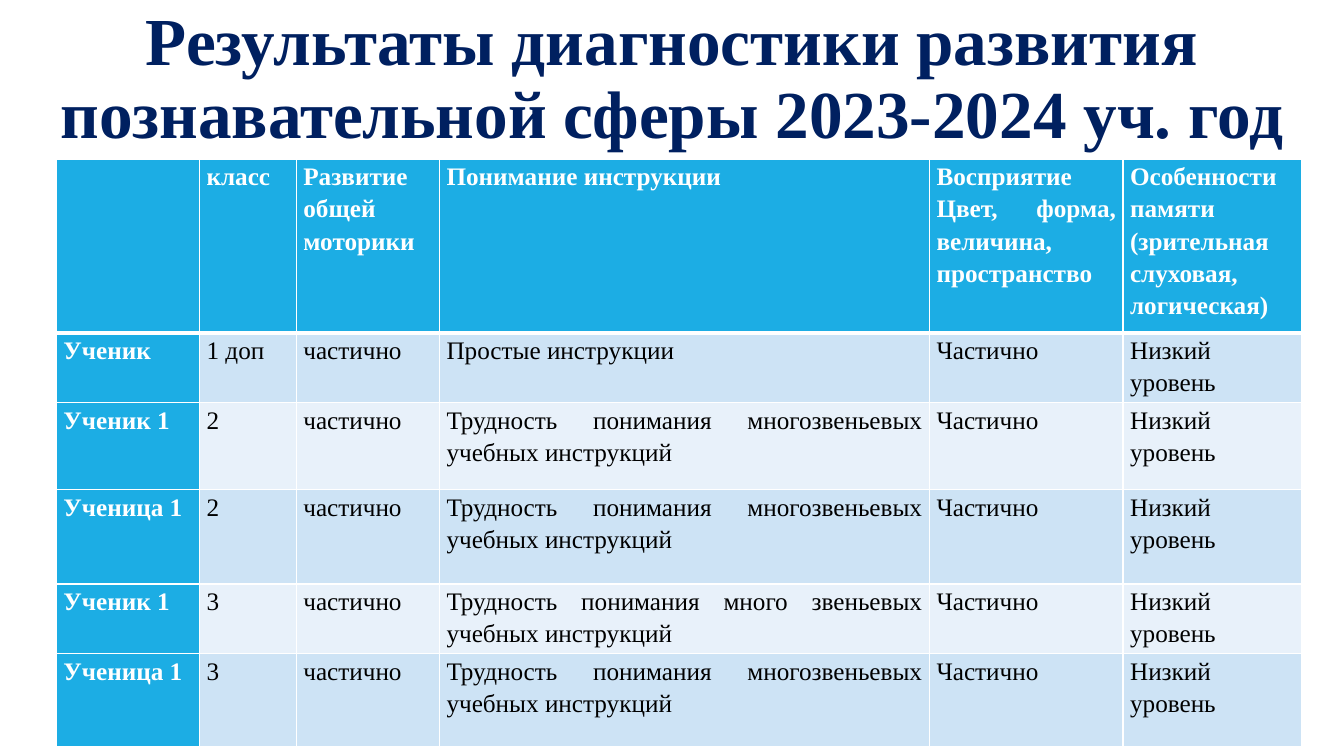
from lxml import etree
from pptx import Presentation
from pptx.dml.color import RGBColor
from pptx.enum.text import MSO_ANCHOR, PP_ALIGN
from pptx.oxml.ns import qn
from pptx.util import Inches, Pt

CENTER, JUSTIFY = PP_ALIGN.CENTER, PP_ALIGN.JUSTIFY
MIDDLE = MSO_ANCHOR.MIDDLE
FONT = "Times New Roman"
NAVY, BLUE, WHITE, BLACK = "002060", "1CADE4", "FFFFFF", "000000"
BANDS = ["CDE3F5", "E8F1FA"]

TITLE = "Результаты диагностики развития познавательной сферы 2023-2024 уч. год"
HEADER = [
    "", "класс", "Развитие общей моторики", "Понимание инструкции",
    "Восприятие\nЦвет, форма, величина, пространство",
    "Особенности памяти (зрительная слуховая, логическая)",
]
COMPLEX = "Трудность понимания многозвеньевых учебных инструкций"
PUPILS = [
    ("Ученик", "1 доп", "Простые инструкции"),
    ("Ученик 1", "2", COMPLEX),
    ("Ученица 1", "2", COMPLEX),
    ("Ученик 1", "3", "Трудность понимания много звеньевых учебных инструкций"),
    ("Ученица 1", "3", COMPLEX),
]
COL_WIDTHS = [1.42, 0.96, 1.42, 4.86, 1.92, 1.77]
ROW_HEIGHTS = [1.04, 0.33, 0.86, 0.94, 0.69, 0.92]


def rgb(color):
    """Turn a hex string into a colour."""
    return RGBColor.from_string(color)


def format_text(tf, size, color, bold, align, spacing):
    """Apply one style to every paragraph and run of a text frame."""
    for p in tf.paragraphs:
        p.alignment = align
        p.line_spacing = spacing
        for r in p.runs:
            r.font.name = FONT
            r.font.size = Pt(size)
            r.font.bold = bold
            r.font.color.rgb = rgb(color)


def add_border(cell, side, width):
    """Draw a white line on one side of a cell."""
    ln = etree.SubElement(cell._tc.get_or_add_tcPr(), qn("a:ln" + side), w=str(Pt(width)))
    fill = etree.SubElement(ln, qn("a:solidFill"))
    etree.SubElement(fill, qn("a:srgbClr"), val=WHITE)


def add_title(s, left, top, width, height):
    """Place the centred slide title."""
    tf = s.shapes.add_textbox(*map(Inches, (left, top, width, height))).text_frame
    tf.word_wrap = True
    tf.vertical_anchor = MIDDLE
    tf.text = TITLE
    format_text(tf, 48, NAVY, True, CENTER, 0.9)


def fill_cell(cell, text, row, col):
    """Write and style a cell according to its row and column."""
    heading = row == 0 or col == 0
    cell.margin_left = cell.margin_right = Inches(0.07)
    cell.margin_top = cell.margin_bottom = 0
    cell.text_frame.text = text
    format_text(cell.text_frame, 18, WHITE if heading else BLACK, heading, JUSTIFY, 1.15)
    for side in "LRTB":
        under_header = (row, side) in ((0, "B"), (1, "T"))
        add_border(cell, side, 3 if under_header else 1)
    cell.fill.solid()
    cell.fill.fore_color.rgb = rgb(BLUE if heading else BANDS[(row - 1) % 2])


def add_results(s, left, top, width, height):
    """Place the table of diagnostic results."""
    rows = [HEADER] + [
        [name, grade, "частично", instructions, "Частично", "Низкий уровень"]
        for name, grade, instructions in PUPILS
    ]
    frame = s.shapes.add_table(len(rows), len(HEADER), *map(Inches, (left, top, width, height)))
    table = frame.table
    for column, w in zip(table.columns, COL_WIDTHS):
        column.width = Inches(w)
    for row, h in zip(table.rows, ROW_HEIGHTS):
        row.height = Inches(h)
    frame.height = Inches(height)
    for i, texts in enumerate(rows):
        for j, text in enumerate(texts):
            fill_cell(table.cell(i, j), text, i, j)


def main():
    """Build the slide and save it."""
    prs = Presentation()
    prs.slide_width, prs.slide_height = Inches(13.33), Inches(7.5)
    s = prs.slides.add_slide(prs.slide_layouts[6])
    add_title(s, 0.17, 0.07, 12.99, 1.45)
    add_results(s, 0.56, 1.58, sum(COL_WIDTHS), 5.82)
    prs.save("out.pptx")


if __name__ == "__main__":
    main()
